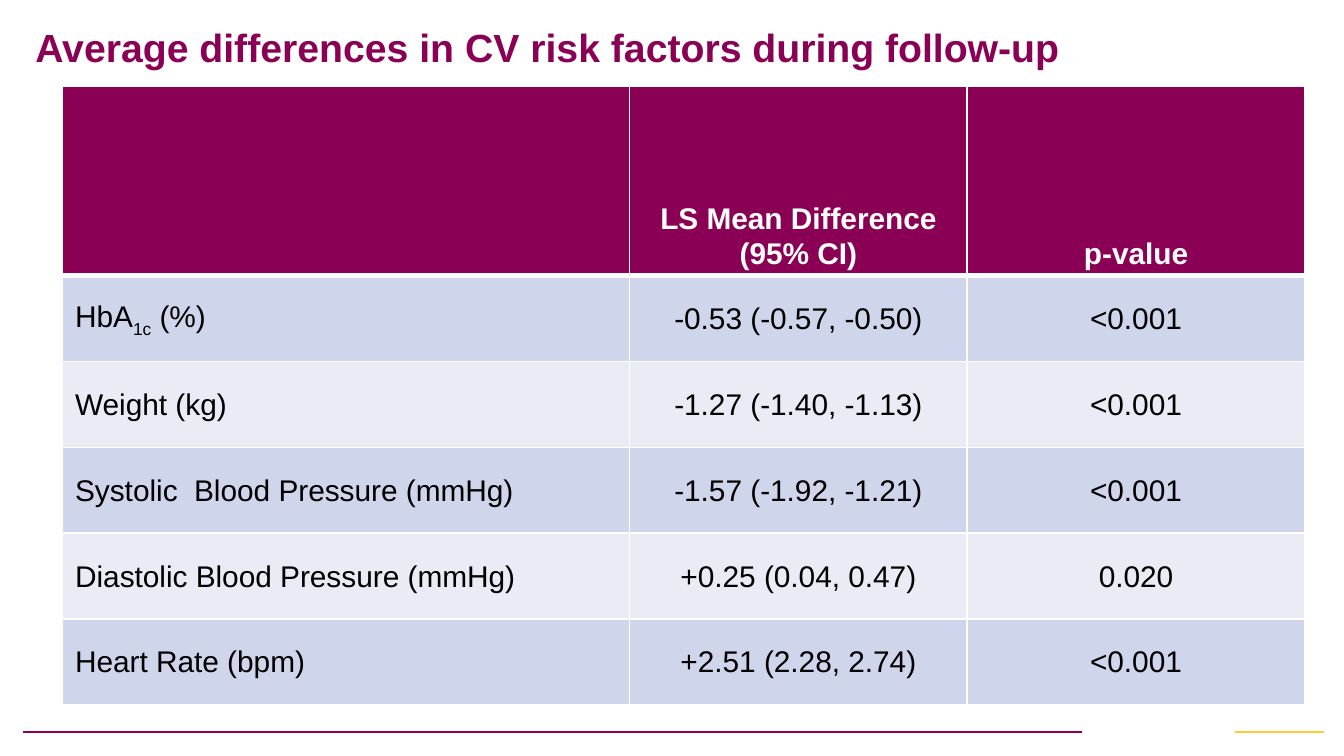
from lxml import etree
from pptx import Presentation
from pptx.dml.color import RGBColor
from pptx.enum.shapes import MSO_CONNECTOR
from pptx.enum.text import MSO_ANCHOR, PP_ALIGN
from pptx.oxml.ns import qn
from pptx.util import Cm, Pt

LEFT, CENTER = PP_ALIGN.LEFT, PP_ALIGN.CENTER
MIDDLE, BOTTOM = MSO_ANCHOR.MIDDLE, MSO_ANCHOR.BOTTOM
STRAIGHT = MSO_CONNECTOR.STRAIGHT

PLUM = RGBColor(0x8A, 0x00, 0x54)
GOLD = RGBColor(0xFF, 0xCA, 0x38)
WHITE = RGBColor(0xFF, 0xFF, 0xFF)
BLACK = RGBColor(0x00, 0x00, 0x00)
BAND_DARK = RGBColor(0xCF, 0xD5, 0xEA)
BAND_LIGHT = RGBColor(0xE9, 0xEB, 0xF5)

FONT = "Arial"
SUBSCRIPT = "-25000"
COLUMN_WIDTHS = [Cm(10.72), Cm(6.38), Cm(6.38)]
HEADER_HEIGHT, ROW_HEIGHT = Cm(3.58), Cm(1.62)
HEADER = ["", "LS Mean Difference (95% CI)", "p-value"]
RISK_FACTORS = [
    [("HbA", "1c", " (%)"), "-0.53 (-0.57, -0.50)", "<0.001"],
    ["Weight (kg)", "-1.27 (-1.40, -1.13)", "<0.001"],
    ["Systolic  Blood Pressure (mmHg)", "-1.57 (-1.92, -1.21)", "<0.001"],
    ["Diastolic Blood Pressure (mmHg)", "+0.25 (0.04, 0.47)", "0.020"],
    ["Heart Rate (bpm)", "+2.51 (2.28, 2.74)", "<0.001"],
]


def write_text(tf, text, size=16, color=BLACK, bold=False, align=LEFT, spacing=1.05):
    """Write text, or a (base, subscript, rest) tuple, into the first paragraph."""
    p = tf.paragraphs[0]
    p.alignment, p.line_spacing = align, spacing
    p.font.size = Pt(size)
    parts = (text,) if isinstance(text, str) else text
    for i, part in enumerate(parts):
        if not part:
            continue
        r = p.add_run()
        r.text = part
        r.font.name, r.font.size, r.font.bold = FONT, Pt(size), bold
        r.font.color.rgb = color
        if i == 1:
            r._r.get_or_add_rPr().set("baseline", SUBSCRIPT)


def add_title(s, text):
    """Add the slide title."""
    tf = s.shapes.add_textbox(Cm(0.48), Cm(0.2), Cm(21.9), Cm(1.5)).text_frame
    tf.word_wrap = True
    tf.vertical_anchor = MIDDLE
    tf.margin_left = tf.margin_right = Cm(0.19)
    tf.margin_top = tf.margin_bottom = Cm(0.1)
    write_text(tf, text, size=21, color=PLUM, bold=True, spacing=0.9)


def add_rule(s, start, end, color):
    """Add a horizontal footer rule."""
    y = Cm(13.82)
    line = s.shapes.add_connector(STRAIGHT, start, y, end, y)
    line.line.color.rgb = color
    line.line.width = Pt(1)
    etree.SubElement(line._element.spPr, qn("a:effectLst"))


def set_borders(cell, **widths):
    """Draw white cell borders with point widths keyed by side: L, R, T, B."""
    tcPr = cell._tc.get_or_add_tcPr()
    for side, width in widths.items():
        ln = etree.SubElement(tcPr, qn(f"a:ln{side}"), w=str(Pt(width)))
        fill = etree.SubElement(ln, qn("a:solidFill"))
        etree.SubElement(fill, qn("a:srgbClr"), val=str(WHITE))


def add_risk_table(s):
    """Add the table of differences by risk factor."""
    rows = [HEADER] + RISK_FACTORS
    heights = [HEADER_HEIGHT] + [ROW_HEIGHT] * len(RISK_FACTORS)
    table = s.shapes.add_table(len(rows), len(HEADER), Cm(1.18), Cm(1.63),
                               sum(COLUMN_WIDTHS), sum(heights)).table
    for column, width in zip(table.columns, COLUMN_WIDTHS):
        column.width = width
    for i, (row, height) in enumerate(zip(rows, heights)):
        table.rows[i].height = height
        header = i == 0
        band = BAND_DARK if i % 2 else BAND_LIGHT
        for j, text in enumerate(row):
            cell = table.cell(i, j)
            set_borders(cell, L=1, R=1, T=3 if i == 1 else 1, B=3 if header else 1)
            cell.fill.solid()
            cell.fill.fore_color.rgb = PLUM if header else band
            cell.vertical_anchor = BOTTOM if header else MIDDLE
            cell.margin_left = cell.margin_right = Cm(0.24)
            cell.margin_top = cell.margin_bottom = Cm(0.1)
            write_text(cell.text_frame, text, color=WHITE if header else BLACK,
                       bold=header, align=CENTER if j else LEFT)


def main():
    """Build the slide and save it."""
    prs = Presentation()
    prs.slide_width, prs.slide_height = Cm(25.4), Cm(14.28)
    s = prs.slides.add_slide(prs.slide_layouts[6])
    add_rule(s, Cm(0.43), Cm(20.45), PLUM)
    add_rule(s, Cm(23.34), Cm(25.02), GOLD)
    add_title(s, "Average differences in CV risk factors during follow-up")
    add_risk_table(s)
    prs.save("out.pptx")


if __name__ == "__main__":
    main()
